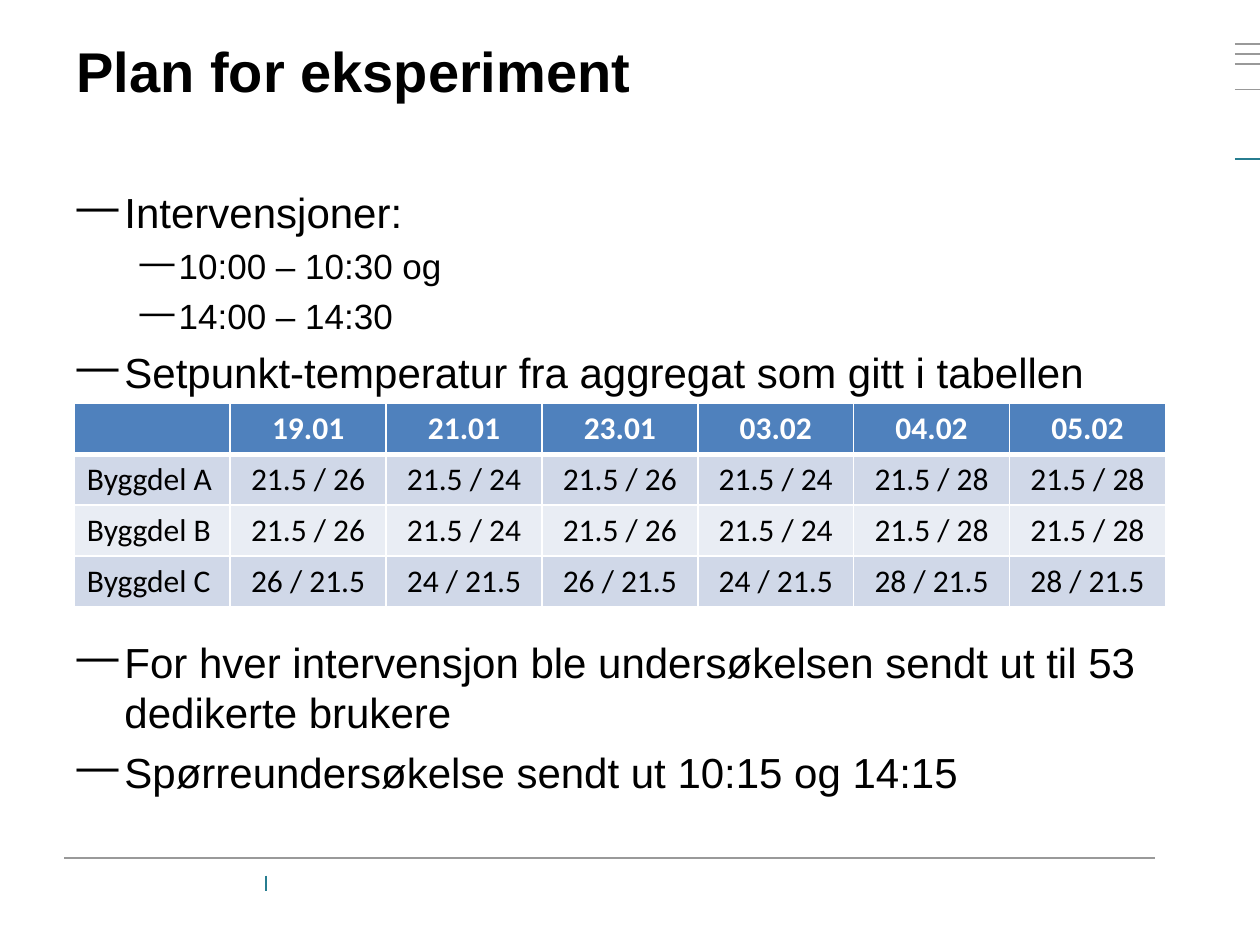
from lxml import etree
from pptx import Presentation
from pptx.dml.color import RGBColor
from pptx.enum.shapes import MSO_CONNECTOR
from pptx.enum.text import PP_ALIGN
from pptx.oxml.ns import qn
from pptx.util import Inches, Pt


def color(value):
    return RGBColor.from_string(value)


def add_text(left, top, width, height, paragraphs):
    """Add a text box from (text, format, indent) entries."""
    shape = slide.shapes.add_textbox(Inches(left), Inches(top), Inches(width), Inches(height))
    frame = shape.text_frame
    frame.word_wrap = True
    for index, (text, values, indent) in enumerate(paragraphs):
        paragraph = frame.paragraphs[0] if index == 0 else frame.add_paragraph()
        paragraph.text = text
        if indent:
            margin, hanging = indent
            properties = paragraph._p.get_or_add_pPr()
            properties.set("marL", str(Inches(margin)))
            properties.set("indent", str(-Inches(hanging)))
            if index:
                paragraph.space_before = Pt(values["size"].pt * 0.23)
            etree.SubElement(properties, qn("a:buChar")).set("char", "—")
        for name, value in values.items():
            setattr(paragraph.font, name, value)
        paragraph.font.color.rgb = color("000000")


presentation = Presentation()
presentation.slide_width = Inches(10)
presentation.slide_height = Inches(7.5)
slide = presentation.slides.add_slide(presentation.slide_layouts[6])

# Footer rule, footer divider and margin marks
GRAY, TEAL = "999999", "277D90"
rules = [(0.51, 6.81, 9.17, 6.81, GRAY), (2.11, 6.95, 2.11, 7.07, TEAL)]
rules += [(9.8, y, 10, y, GRAY) for y in (0.35, 0.43, 0.51, 0.71)]
rules.append((9.8, 1.26, 10, 1.26, TEAL))
for x1, y1, x2, y2, line_color in rules:
    connector = slide.shapes.add_connector(
        MSO_CONNECTOR.STRAIGHT, Inches(x1), Inches(y1), Inches(x2), Inches(y2))
    connector.line.color.rgb = color(line_color)
    connector.line.width = Pt(1)
    etree.SubElement(connector._element.spPr, qn("a:effectLst"))

# Title
title_format = {"name": "Arial", "size": Pt(32), "bold": True}
add_text(0.51, 0.24, 8.66, 1.02, [("Plan for eksperiment", title_format, None)])

# Bullets above and below the table
main = ({"name": "Arial", "size": Pt(24)}, (0.38, 0.38))
sub = ({"name": "Arial", "size": Pt(20)}, (0.81, 0.31))
add_text(0.51, 1.43, 8.66, 1.75, [
    ("Intervensjoner:", *main),
    ("10:00 – 10:30 og", *sub),
    ("14:00 – 14:30", *sub),
    ("Setpunkt-temperatur fra aggregat som gitt i tabellen", *main),
])
add_text(0.51, 5, 8.66, 1.4, [
    ("For hver intervensjon ble undersøkelsen sendt ut til 53 dedikerte brukere", *main),
    ("Spørreundersøkelse sendt ut 10:15 og 14:15", *main),
])

# Setpoint table
a_and_b = ["21.5 / 26", "21.5 / 24", "21.5 / 26", "21.5 / 24", "21.5 / 28", "21.5 / 28"]
rows = [
    ["", "19.01", "21.01", "23.01", "03.02", "04.02", "05.02"],
    ["Byggdel A", *a_and_b],
    ["Byggdel B", *a_and_b],
    ["Byggdel C", "26 / 21.5", "24 / 21.5", "26 / 21.5", "24 / 21.5", "28 / 21.5", "28 / 21.5"],
]
fills = ["4F81BD", "D0D8E8", "E9EDF4", "D0D8E8"]
table = slide.shapes.add_table(
    len(rows), len(rows[0]), Inches(0.59), Inches(3.2), Inches(8.66), Inches(1.62)).table
for row_index, row in enumerate(rows):
    header = row_index == 0
    for column_index, text in enumerate(row):
        cell = table.cell(row_index, column_index)
        # Borders come before the fill in the cell properties
        properties = cell._tc.get_or_add_tcPr()
        for side in ("L", "R", "T", "B"):
            thick = (header and side == "B") or (row_index == 1 and side == "T")
            border = etree.SubElement(properties, qn(f"a:ln{side}"))
            border.set("w", str(Pt(3 if thick else 1)))
            border_fill = etree.SubElement(border, qn("a:solidFill"))
            etree.SubElement(border_fill, qn("a:srgbClr")).set("val", "FFFFFF")
        cell.fill.solid()
        cell.fill.fore_color.rgb = color(fills[row_index])
        cell.text = text
        paragraph = cell.text_frame.paragraphs[0]
        paragraph.alignment = PP_ALIGN.CENTER if column_index else PP_ALIGN.LEFT
        for name, value in {"name": "Calibri", "size": Pt(18), "bold": header}.items():
            setattr(paragraph.font, name, value)
        paragraph.font.color.rgb = color("FFFFFF" if header else "000000")

presentation.save("out.pptx")
